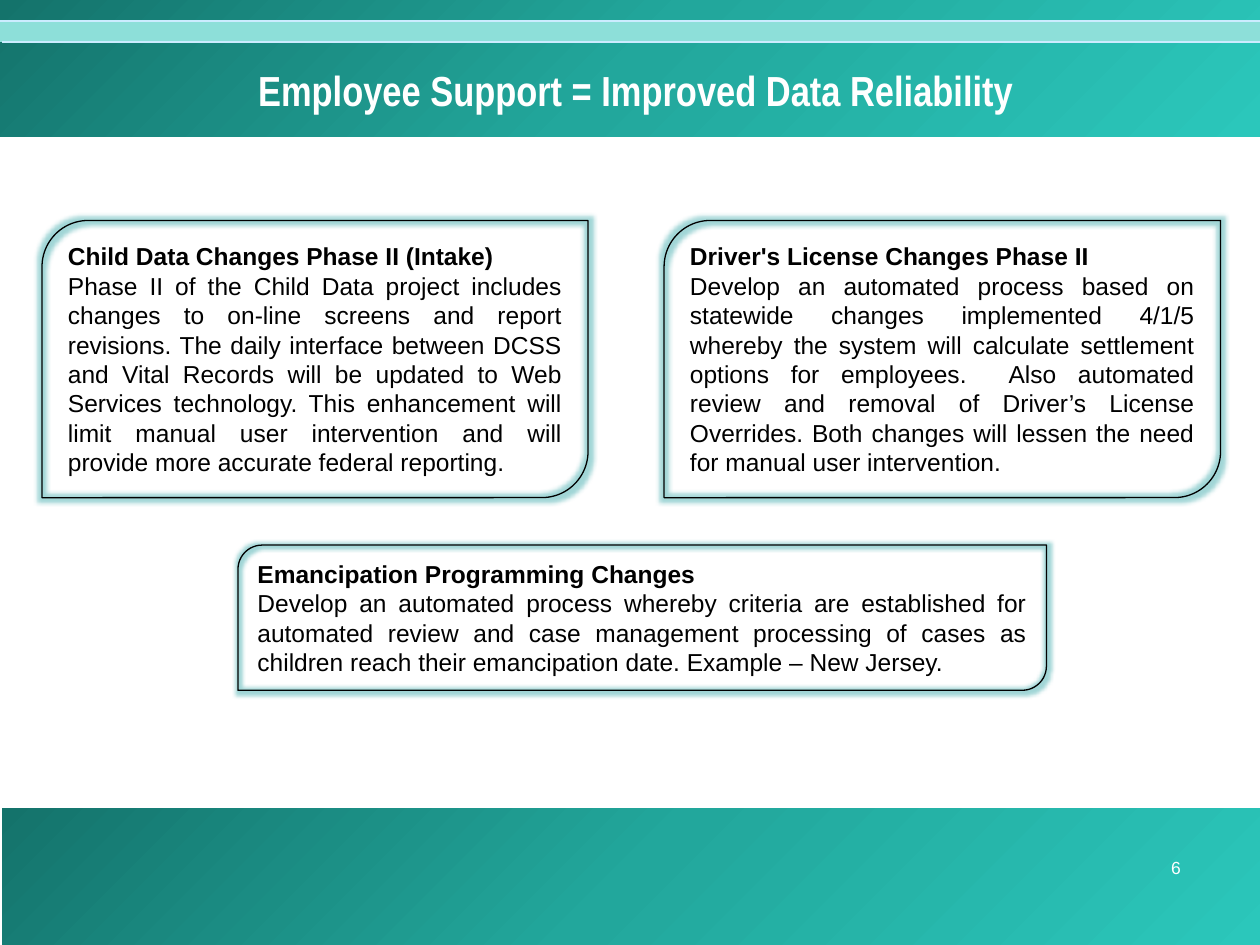
"""Build the slide on employee support and data reliability."""
from copy import deepcopy

from pptx import Presentation, util as u
from pptx.dml.color import RGBColor
from pptx.enum import shapes, text
from pptx.oxml import parse_xml
from pptx.oxml.ns import nsdecls, qn


def color(hex_value):
    return RGBColor.from_string(hex_value)


def write(shape, lines, align, anchor, font_format):
    frame = shape.text_frame
    frame.word_wrap = True
    frame.vertical_anchor = anchor
    for index, (line, bold) in enumerate(lines):
        paragraph = frame.paragraphs[0] if index == 0 else frame.add_paragraph()
        paragraph.alignment = align
        run = paragraph.add_run()
        run.text = line
        run.font.bold = bold
        run.font.color.rgb = color(font_format["color"])
        for name in ("name", "size"):
            setattr(run.font, name, font_format[name])


presentation = Presentation()
presentation.slide_width, presentation.slide_height = u.Pt(720), u.Pt(540)
slide = presentation.slides.add_slide(presentation.slide_layouts[6])

gradient = [(0, "14736B"), (0.5, "22A79C"), (1, "2BC7BB")]
for left, top in [(1.2, 462), (0, 0)]:
    band = slide.shapes.add_shape(
        shapes.MSO_SHAPE.RECTANGLE, u.Pt(left), u.Pt(top), u.Pt(720), u.Pt(78))
    band.shadow.inherit = False
    band.line.fill.background()
    band.fill.gradient()
    band.fill.gradient_angle = 315
    stop_list = band._element.spPr.find(".//" + qn("a:gsLst"))
    stop_list.append(deepcopy(stop_list[-1]))
    for stop, (position, hex_value) in zip(band.fill.gradient_stops, gradient):
        stop.position = position
        stop.color.rgb = color(hex_value)

stripe = slide.shapes.add_shape(
    shapes.MSO_SHAPE.RECTANGLE, u.Pt(0), u.Pt(12), u.Pt(720), u.Pt(12))
stripe.shadow.inherit = False
stripe.line.fill.background()
stripe.fill.solid()
stripe.fill.fore_color.rgb = color("8DDFD9")

for left, top in [(0, 12), (1.2, 24)]:
    edge = slide.shapes.add_connector(
        shapes.MSO_CONNECTOR.STRAIGHT, u.Pt(left), u.Pt(top), u.Pt(720), u.Pt(top))
    edge.line.color.rgb = color("CCECFF")
    edge.line.width = u.Pt(1.5)
    edge._element.spPr.append(parse_xml(f"<a:effectLst {nsdecls('a')}/>"))

title = slide.shapes.add_textbox(u.Pt(24), u.Pt(6), u.Pt(684), u.Pt(90))
write(title, [("Employee Support = Improved Data Reliability ", True)],
      text.PP_ALIGN.CENTER, text.MSO_ANCHOR.MIDDLE,
      {"name": "Arial Narrow", "size": u.Pt(24), "color": "FFFFFF"})

page_number = slide.shapes.add_textbox(u.Pt(648), u.Pt(486), u.Pt(48), u.Pt(30))
write(page_number, [("6", False)], text.PP_ALIGN.CENTER, text.MSO_ANCHOR.TOP,
      {"name": "Arial", "size": u.Pt(10), "color": "FFFFFF"})

projects = [
    (379.5, 126, 318, 158.4, "Driver's License Changes Phase II",
     "Develop an automated process based on statewide changes implemented 4/1/5 "
     "whereby the system will calculate settlement options for employees.  Also "
     "automated review and removal of Driver’s License Overrides. Both changes will "
     "lessen the need for manual user intervention."),
    (136, 311.5, 462, 83, "Emancipation Programming Changes",
     "Develop an automated process whereby criteria are established for automated "
     "review and case management processing of cases as children reach their "
     "emancipation date. Example – New Jersey."),
    (24, 126, 312, 158.4, "Child Data Changes Phase II (Intake)",
     "Phase II of the Child Data project includes changes to on-line screens and "
     "report revisions. The daily interface between DCSS and Vital Records will be "
     "updated to Web Services technology. This enhancement will limit manual user "
     "intervention and will provide more accurate federal reporting."),
]
for left, top, width, height, heading, description in projects:
    card = slide.shapes.add_shape(
        shapes.MSO_SHAPE.ROUND_2_DIAG_RECTANGLE,
        u.Pt(left), u.Pt(top), u.Pt(width), u.Pt(height))
    card.fill.background()
    card.line.color.rgb = color("000000")
    card.line.width = u.Pt(0.75)
    card.shadow.inherit = False
    card._element.spPr.find(qn("a:effectLst")).append(parse_xml(
        f'<a:glow {nsdecls("a")} rad="{u.Pt(5)}"><a:srgbClr val="14989A">'
        '<a:alpha val="40000"/></a:srgbClr></a:glow>'))
    write(card, [(heading, True), (description, False)],
          text.PP_ALIGN.JUSTIFY, text.MSO_ANCHOR.MIDDLE,
          {"name": "Arial", "size": u.Pt(14), "color": "000000"})
    card.text_frame.auto_size = text.MSO_AUTO_SIZE.SHAPE_TO_FIT_TEXT

presentation.save("out.pptx")
